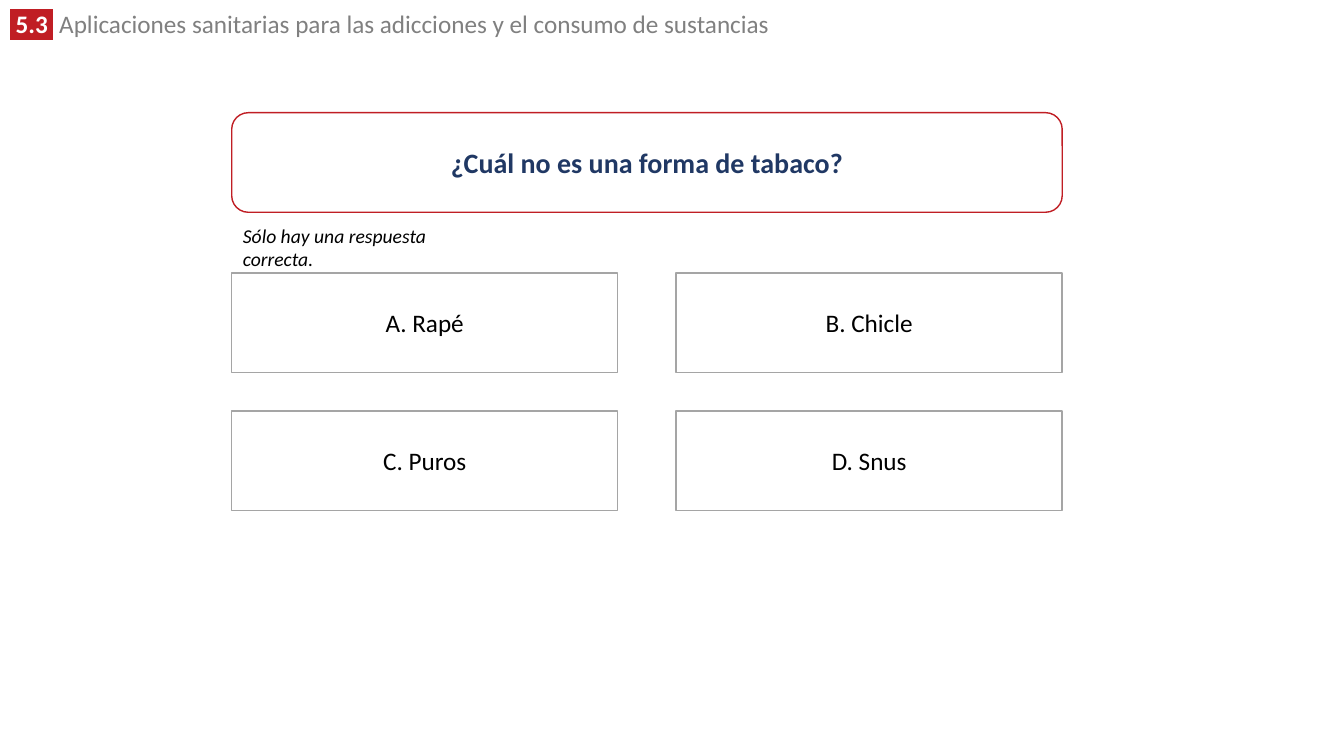
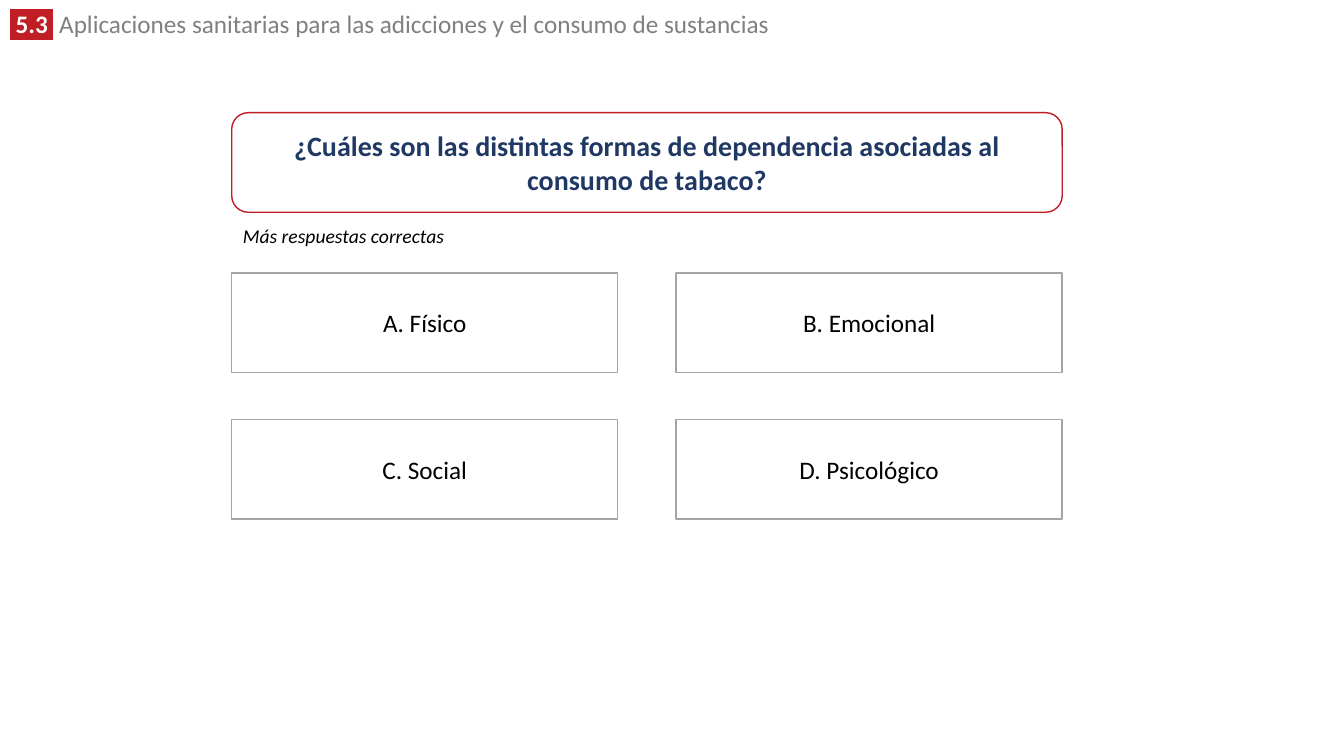
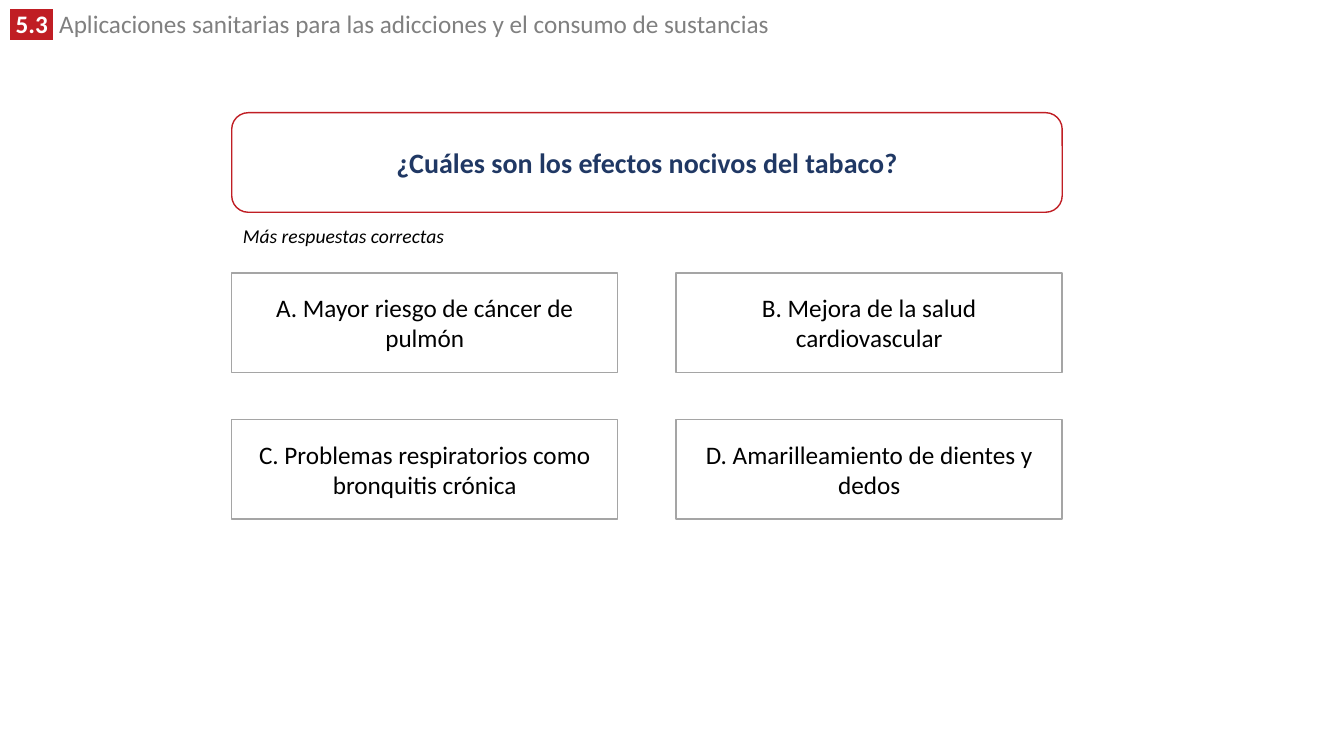
"""Build three quiz slides on tobacco that share a header and an answer grid."""
import lxml.etree
import pptx
import pptx.dml.color
import pptx.enum.shapes
import pptx.enum.text
import pptx.oxml.ns
import pptx.util

Cm = pptx.util.Cm
Pt = pptx.util.Pt
RGBColor = pptx.dml.color.RGBColor
Shape = pptx.enum.shapes.MSO_SHAPE
Align = pptx.enum.text.PP_ALIGN
Anchor = pptx.enum.text.MSO_ANCHOR
Fit = pptx.enum.text.MSO_AUTO_SIZE
qn = pptx.oxml.ns.qn

RED = RGBColor(0xC0, 0x1E, 0x24)
NAVY = RGBColor(0x20, 0x38, 0x64)
GRAY = RGBColor(0x80, 0x80, 0x80)
SILVER = RGBColor(0xA5, 0xA5, 0xA5)
BLACK = RGBColor(0, 0, 0)
WHITE = RGBColor(0xFF, 0xFF, 0xFF)

BADGE = {"name": "Calibri", "size": Pt(18), "bold": True}
TITLE = {"name": "Calibri", "size": Pt(18), "bold": False}
QUERY = {"name": "Calibri", "size": Pt(20), "bold": True}
NOTE = {"name": "Calibri", "size": Pt(14), "italic": True}
REPLY = {"name": "Calibri", "size": Pt(18)}

LEFT = 5.84
WIDE = 20.93
TALL = 2.51
CELL = 9.73
TOP = 6.88

SLIDES = [
    ("¿Cuál no es una forma de tabaco?",
     "Sólo hay una respuesta correcta.", 3.48,
     ["A. Rapé", "B. Chicle", "C. Puros", "D. Snus"]),
    ("¿Cuáles son las distintas formas de dependencia asociadas al consumo de tabaco?",
     "Más respuestas correctas", 3.69,
     ["A. Físico", "B. Emocional", "C. Social", "D. Psicológico"]),
    ("¿Cuáles son los efectos nocivos del tabaco?",
     "Más respuestas correctas", 3.69,
     ["A. Mayor riesgo de cáncer de pulmón",
      "B. Mejora de la salud cardiovascular",
      "C. Problemas respiratorios como bronquitis crónica",
      "D. Amarilleamiento de dientes y dedos"]),
]


def add_run(para, text, style, color):
    run = para.add_run()
    run.text = text
    for key, value in style.items():
        setattr(run.font, key, value)
    run.font.color.rgb = color
    return run


def mark(run, color):
    props = run.font._element
    light = lxml.etree.Element(qn("a:highlight"))
    lxml.etree.SubElement(light, qn("a:srgbClr"), val=str(color))
    props.find(qn("a:solidFill")).addnext(light)


def add_text(slide, left, top, width, height):
    box = slide.shapes.add_textbox(Cm(left), Cm(top), Cm(width), Cm(height))
    box.text_frame.word_wrap = True
    box.text_frame.auto_size = Fit.SHAPE_TO_FIT_TEXT
    return box.text_frame.paragraphs[0]


def add_head(slide):
    para = add_text(slide, 0, 0.23, 24.18, 0.89)
    para.line_spacing = 0.8
    mark(add_run(para, " 5.3 ", BADGE, WHITE), RED)
    add_run(para, " Aplicaciones sanitarias para las adicciones y el consumo de sustancias",
            TITLE, GRAY)


def add_box(slide, kind, left, top, width, edge, text, style, color):
    box = slide.shapes.add_shape(kind, Cm(left), Cm(top), Cm(width), Cm(TALL))
    box.shadow.inherit = False
    box.fill.solid()
    box.fill.fore_color.rgb = WHITE
    box.line.color.rgb = edge
    box.line.width = Pt(1)
    frame = box.text_frame
    frame.word_wrap = True
    frame.vertical_anchor = Anchor.MIDDLE
    para = frame.paragraphs[0]
    para.alignment = Align.CENTER
    add_run(para, text, style, color)


def add_grid(slide, pitch, texts):
    for index, text in enumerate(texts):
        row, col = divmod(index, 2)
        add_box(slide, Shape.RECTANGLE, LEFT + col * (WIDE - CELL), TOP + row * pitch,
                CELL, SILVER, text, REPLY, BLACK)


def main():
    deck = pptx.Presentation()
    deck.slide_width = Cm(33.87)
    deck.slide_height = Cm(19.05)
    for query, note, pitch, texts in SLIDES:
        slide = deck.slides.add_slide(deck.slide_layouts[6])
        add_head(slide)
        add_box(slide, Shape.ROUNDED_RECTANGLE, LEFT, 2.84, WIDE, RED, query, QUERY, NAVY)
        add_run(add_text(slide, LEFT + 0.03, 5.51, 5.99, 0.86), note, NOTE, BLACK)
        add_grid(slide, pitch, texts)
    deck.save("out.pptx")


if __name__ == "__main__":
    main()
